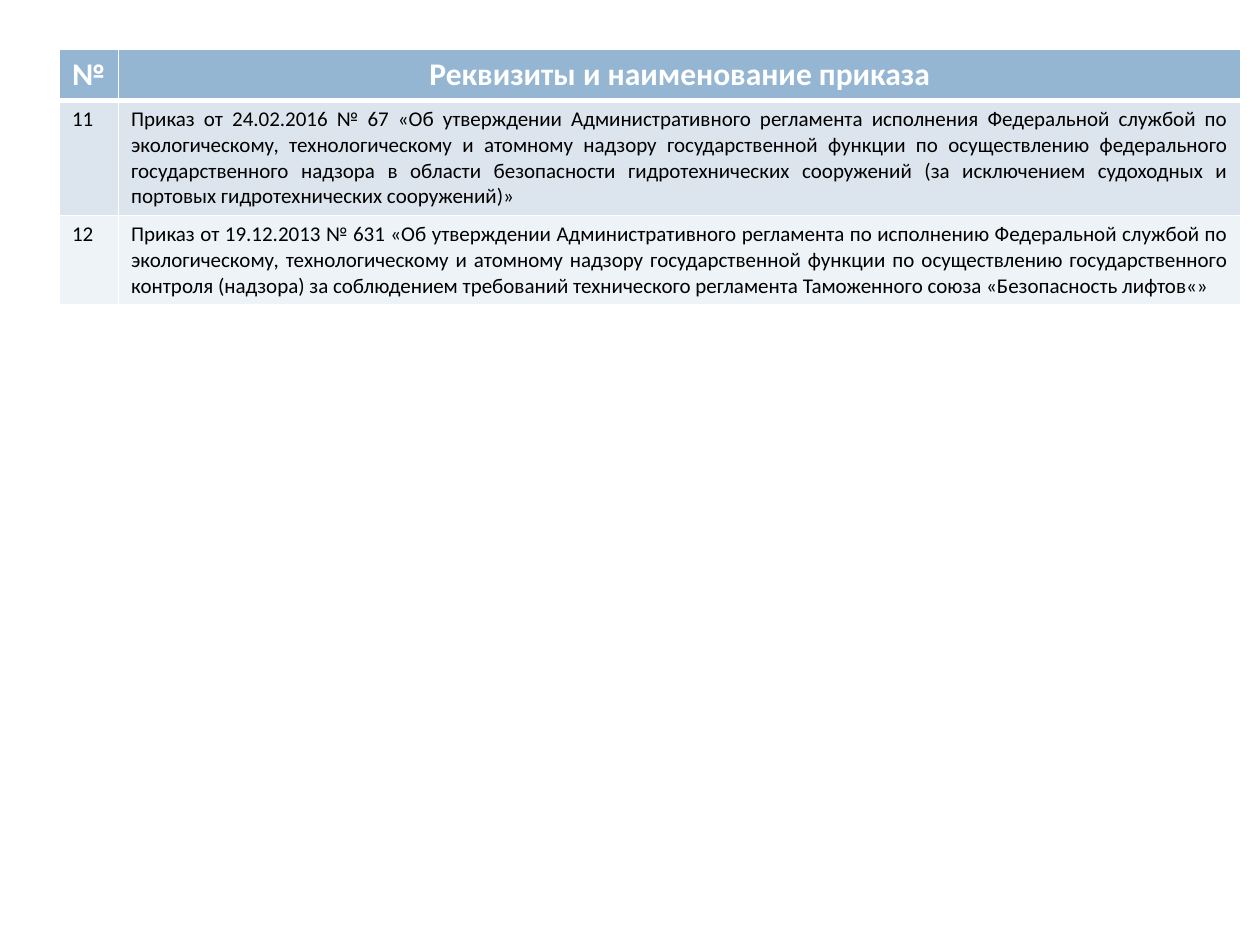
import lxml.etree
import pptx
import pptx.dml.color
import pptx.enum.text
import pptx.oxml.ns
import pptx.util

Cm = pptx.util.Cm
Pt = pptx.util.Pt
ALIGN = pptx.enum.text.PP_ALIGN

COLORS = {
    "header": "94B6D2",
    "odd_row": "DCE5EE",
    "even_row": "EEF3F7",
    "light": "FFFFFF",
    "text": "000000",
}

ORDERS = [
    ("11", "Приказ от 24.02.2016 № 67 «Об утверждении Административного регламента "
           "исполнения Федеральной службой по экологическому, технологическому и атомному "
           "надзору государственной функции по осуществлению федерального государственного "
           "надзора в области безопасности гидротехнических сооружений (за исключением "
           "судоходных и портовых гидротехнических сооружений)»"),
    ("12", "Приказ от 19.12.2013 № 631 «Об утверждении Административного регламента по "
           "исполнению Федеральной службой по экологическому, технологическому и атомному "
           "надзору государственной функции по осуществлению государственного контроля "
           "(надзора) за соблюдением требований технического регламента Таможенного союза "
           "«Безопасность лифтов«»"),
]


class SlideBuilder:
    font_name = "Calibri"
    header_size = Pt(18)
    body_size = Pt(12)

    def __init__(self, slide):
        self.slide = slide

    def border(self, cell, side, width):
        properties = cell._tc.get_or_add_tcPr()
        qn = pptx.oxml.ns.qn
        line = lxml.etree.SubElement(properties, qn(f"a:ln{side}"), w=str(width))
        fill = lxml.etree.SubElement(line, qn("a:solidFill"))
        lxml.etree.SubElement(fill, qn("a:srgbClr"), val=COLORS["light"])

    def cell(self, cell, text, fill, alignment, header, top_width, bottom_width):
        for side, width in zip("LRTB", (Pt(1), Pt(1), top_width, bottom_width)):
            self.border(cell, side, width)
        cell.fill.solid()
        cell.fill.fore_color.rgb = pptx.dml.color.RGBColor.from_string(COLORS[fill])
        cell.text_frame.text = text
        paragraph = cell.text_frame.paragraphs[0]
        paragraph.alignment = alignment
        font = paragraph.runs[0].font
        font.name = self.font_name
        font.size = self.header_size if header else self.body_size
        font.bold = header
        color = COLORS["light" if header else "text"]
        font.color.rgb = pptx.dml.color.RGBColor.from_string(color)

    def table(self, left, top, column_widths, row_heights, rows):
        shape = self.slide.shapes.add_table(
            len(rows), len(column_widths), left, top, sum(column_widths), sum(row_heights))
        table = shape.table
        for column, width in zip(table.columns, column_widths):
            column.width = width
        for row, height in zip(table.rows, row_heights):
            row.height = height
        for row_index, texts in enumerate(rows):
            header = row_index == 0
            fill = "header" if header else ("even_row", "odd_row")[row_index % 2]
            alignments = (ALIGN.LEFT, ALIGN.CENTER if header else ALIGN.JUSTIFY)
            top_width = Pt(3) if row_index == 1 else Pt(1)
            bottom_width = Pt(3) if header else Pt(1)
            for column_index, text in enumerate(texts):
                self.cell(table.cell(row_index, column_index), text, fill,
                          alignments[column_index], header, top_width, bottom_width)


def main():
    presentation = pptx.Presentation()
    presentation.slide_width = Cm(25.4)
    presentation.slide_height = Cm(19.05)
    builder = SlideBuilder(presentation.slides.add_slide(presentation.slide_layouts[6]))
    builder.table(
        Cm(1.2), Cm(1), [Cm(1.19), Cm(22.63)], [Cm(1), Cm(2.18), Cm(1.57)],
        [("№", "Реквизиты и наименование приказа"), *ORDERS])
    presentation.save("out.pptx")


if __name__ == "__main__":
    main()
